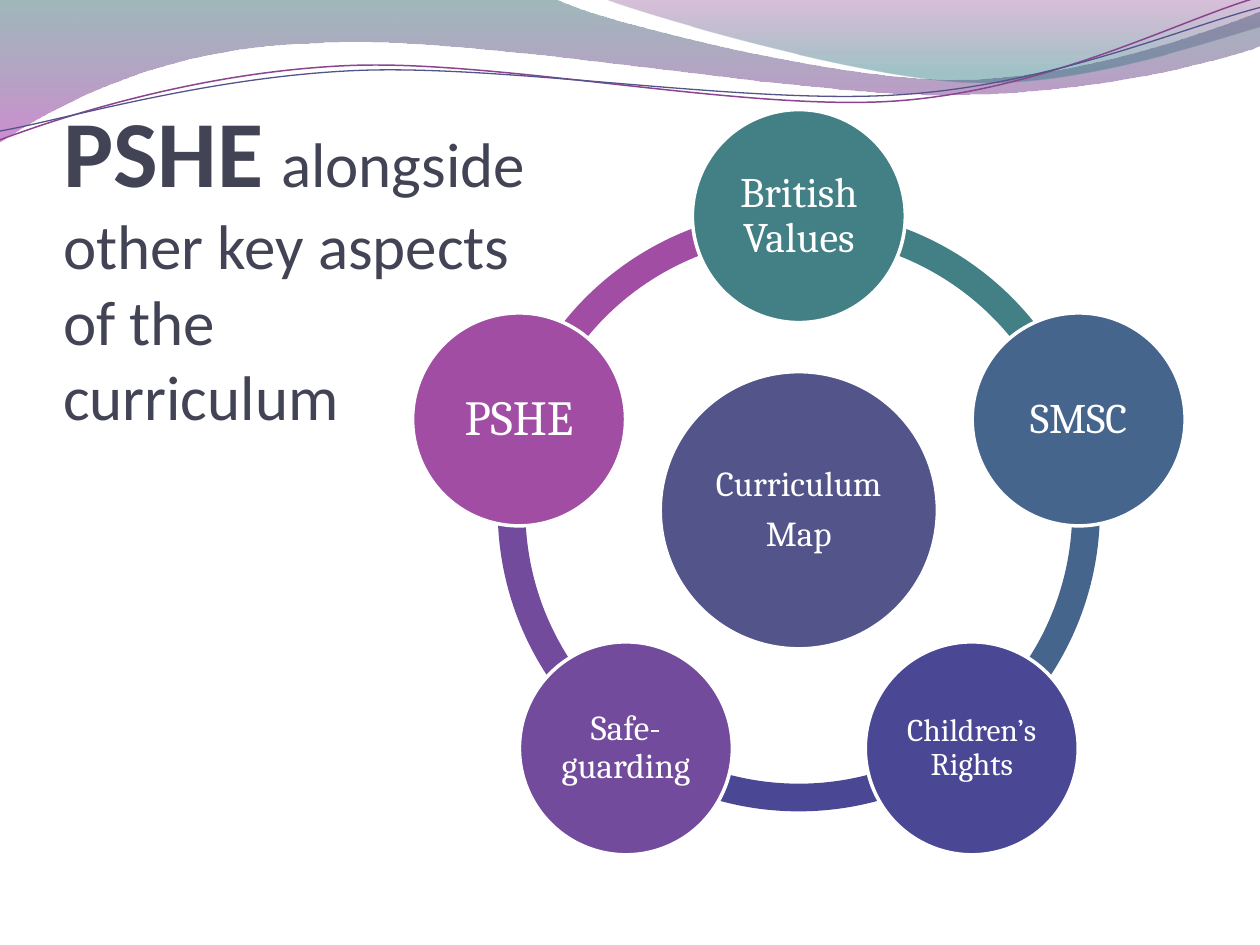
from dataclasses import dataclass
from math import cos, radians, sin

from lxml import etree
from pptx import Presentation
from pptx.dml.color import RGBColor
from pptx.enum.shapes import MSO_SHAPE
from pptx.enum.text import MSO_ANCHOR, MSO_AUTO_SIZE, PP_ALIGN
from pptx.oxml.ns import qn
from pptx.util import Inches, Pt

OVAL, BLOCK_ARC = MSO_SHAPE.OVAL, MSO_SHAPE.BLOCK_ARC
LEFT, CENTER = PP_ALIGN.LEFT, PP_ALIGN.CENTER
MIDDLE, BOTTOM = MSO_ANCHOR.MIDDLE, MSO_ANCHOR.BOTTOM
TITLE_ONLY_LAYOUT = 5


@dataclass(frozen=True)
class Theme:
    title_font: str = "Calibri"
    diagram_font: str = "Cambria"
    white: str = "FFFFFF"
    title: str = "424456"
    indigo: str = "53548A"
    teal: str = "438086"
    blue: str = "46658D"
    navy: str = "4A4894"
    violet: str = "734B9C"
    magenta: str = "A04DA3"
    line_magenta: str = "8D4490"
    title_strong: int = 54
    title_gap: int = 44
    title_size: int = 36
    hub_size: int = 20


# Each wave is a start point followed by segments:
# one point is a straight line, three points are a cubic curve.
BACK_WAVE = [(0, 0), [(4.4, -0.01)],
             [(4.76, 0.17), (6.64, 0.63), (7.58, 0.63)],
             [(8.53, 0.63), (9.58, 0.26), (10, 0.09)], [(10.01, 0.36)],
             [(9.83, 0.44), (8.7, 0.76), (7.46, 0.75)],
             [(6.22, 0.75), (3.82, 0.28), (2.57, 0.34)],
             [(1.29, 0.36), (0.46, 0.83), (-0.01, 1.13)], [(0, 0)]]
FRONT_WAVE = [(4.79, -0.01),
              [(5.09, 0.11), (6.82, 0.62), (7.69, 0.65)],
              [(8.56, 0.69), (9.61, 0.32), (10, 0.21)], [(10, 0)], [(4.79, -0.01)]]
MAGENTA_LINE = [(0, 1.11),
                [(0.48, 0.93), (1.58, 0.57), (2.77, 0.52)],
                [(3.95, 0.47), (5.93, 0.89), (7.13, 0.8)],
                [(8.33, 0.71), (9.38, 0.15), (9.98, -0.02)]]
INDIGO_LINE = [(0, 1.04),
               [(0.47, 0.96), (1.64, 0.61), (2.83, 0.56)],
               [(4.03, 0.51), (5.97, 0.84), (7.17, 0.75)],
               [(8.36, 0.67), (9.41, 0.21), (10, 0.06)]]
LINE_TILT = 2.7  # degrees, counterclockwise

# Stops are position, colour and opacity in percent.
BACK_STOPS = [(0, "2D6368", 45), (1, "A530A9", 55)]
FRONT_STOPS = [(0, "7F2F82", 30), (0.8, "2F7B82", 45)]

HUB_X, HUB_Y = 6.34, 4.05
HUB_DIAMETER, NODE_DIAMETER, RING_DIAMETER = 2.2, 1.69, 4.78
ORBIT_RADIUS = 2.335
RING_THICKNESS = 0.046
ANGLE_UNIT = 0.6  # adjustment value of one degree


def turn(point, pivot, degrees):
    """Turn a point clockwise about the pivot."""
    dx, dy = point[0] - pivot[0], point[1] - pivot[1]
    cosine, sine = cos(radians(degrees)), sin(radians(degrees))
    return pivot[0] + dx * cosine - dy * sine, pivot[1] + dx * sine + dy * cosine


def make_curves(shape, segments):
    """Join the three line steps of each cubic segment into one curve."""
    steps = iter(list(shape.element.iter(qn("a:lnTo"))))
    for segment in segments:
        first, *others = [next(steps) for _ in segment]
        if others:
            first.tag = qn("a:cubicBezTo")
            for step in others:
                first.append(step[0])
                step.getparent().remove(step)


class SlideBuilder:
    def __init__(self, slide, theme):
        self.slide = slide
        self.theme = theme

    def outline(self, path, close, tilt=0, pivot=(0, 0)):
        start, *segments = path
        points = [turn(point, pivot, tilt) for point in [start, *sum(segments, [])]]
        first, *rest = [(Inches(x), Inches(y)) for x, y in points]
        builder = self.slide.shapes.build_freeform(*first)
        builder.add_line_segments(rest, close=close)
        shape = builder.convert_to_shape()
        make_curves(shape, segments)
        shape.rotation = -tilt % 360
        shape.shadow.inherit = False
        return shape

    def wave(self, path, stops):
        shape = self.outline(path, close=True)
        shape.line.fill.background()
        shape.fill.gradient()
        shape.fill.gradient_angle = 270
        for gradient_stop, (position, color, _) in zip(shape.fill.gradient_stops, stops):
            gradient_stop.position = position
            gradient_stop.color.rgb = RGBColor.from_string(color)
        for color_element, (_, _, opacity) in zip(shape.element.iter(qn("a:srgbClr")), stops):
            etree.SubElement(color_element, qn("a:alpha"), val=str(opacity * 1000))

    def wave_line(self, path, pivot, color, width):
        shape = self.outline(path, False, LINE_TILT, pivot)
        shape.fill.background()
        shape.line.color.rgb = RGBColor.from_string(color)
        shape.line.width = Pt(width)

    def centered_shape(self, kind, x, y, diameter, color):
        shape = self.slide.shapes.add_shape(
            kind, Inches(x - diameter / 2), Inches(y - diameter / 2),
            Inches(diameter), Inches(diameter))
        shape.shadow.inherit = False
        shape.fill.solid()
        shape.fill.fore_color.rgb = RGBColor.from_string(color)
        return shape

    def ring_arc(self, start, end, color):
        arc = self.centered_shape(BLOCK_ARC, HUB_X, HUB_Y, RING_DIAMETER, color)
        arc.line.fill.background()
        arc.adjustments[0] = start * ANGLE_UNIT
        arc.adjustments[1] = end * ANGLE_UNIT
        arc.adjustments[2] = RING_THICKNESS

    def circle(self, x, y, diameter, color, text, size):
        circle = self.centered_shape(OVAL, x, y, diameter, color)
        circle.line.color.rgb = RGBColor.from_string(self.theme.white)
        circle.line.width = Pt(2)
        frame = circle.text_frame
        frame.text = text
        frame.word_wrap = True
        frame.vertical_anchor = MIDDLE
        frame.margin_left = frame.margin_right = Inches(0.03)
        frame.margin_top = frame.margin_bottom = Inches(0.03)
        for paragraph in frame.paragraphs:
            paragraph.alignment = CENTER
            paragraph.line_spacing = 0.9
            paragraph.space_after = Pt(size * 0.35)
            for run in paragraph.runs:
                self.format_run(run, self.theme.diagram_font, size, self.theme.white)

    def format_run(self, run, font_name, size, color):
        run.font.name = font_name
        run.font.size = Pt(size)
        run.font.color.rgb = RGBColor.from_string(color)

    def title(self, strong, first_line, other_lines):
        theme = self.theme
        title = self.slide.shapes.title
        title.left, title.top = Inches(0.5), Inches(1.39)
        title.width, title.height = Inches(9), Inches(2.05)
        frame = title.text_frame
        frame.text = "\n".join(["", *other_lines])
        for text in (strong, " ", first_line):
            frame.paragraphs[0].add_run().text = text
        frame.auto_size = MSO_AUTO_SIZE.NONE
        frame.word_wrap = True
        frame.vertical_anchor = BOTTOM
        frame.margin_left = frame.margin_right = frame.margin_bottom = 0
        frame.margin_top = Inches(0.05)
        for paragraph in frame.paragraphs:
            paragraph.alignment = LEFT
            for run in paragraph.runs:
                self.format_run(run, theme.title_font, theme.title_size, theme.title)
        strong_run, gap_run, _ = frame.paragraphs[0].runs
        strong_run.font.size, strong_run.font.bold = Pt(theme.title_strong), True
        gap_run.font.size = Pt(theme.title_gap)
        title.element.getparent().append(title.element)  # bring to front


def main():
    presentation = Presentation()
    presentation.slide_width, presentation.slide_height = Inches(10), Inches(7.5)
    slide = presentation.slides.add_slide(presentation.slide_layouts[TITLE_ONLY_LAYOUT])
    theme = Theme()
    builder = SlideBuilder(slide, theme)

    builder.wave(BACK_WAVE, BACK_STOPS)
    builder.wave(FRONT_WAVE, FRONT_STOPS)
    builder.wave_line(MAGENTA_LINE, (4.99, 0.57), theme.line_magenta, 0.85)
    builder.wave_line(INDIGO_LINE, (5, 0.59), theme.indigo, 0.75)

    nodes = [("British Values", theme.teal, 24), ("SMSC", theme.blue, 24),
             ("Children’s Rights", theme.navy, 18), ("Safe-guarding", theme.violet, 20),
             ("PSHE", theme.magenta, 28)]
    step = 360 // len(nodes)
    angles = [(270 + step * index) % 360 for index in range(len(nodes))]
    for angle, (_, color, _) in reversed(list(zip(angles, nodes))):
        # The arc before the top circle takes the colour of the last circle.
        builder.ring_arc(angle, (angle + step) % 360, color)
    builder.circle(HUB_X, HUB_Y, HUB_DIAMETER, theme.indigo, "Curriculum\nMap", theme.hub_size)
    for angle, (text, color, size) in zip(angles, nodes):
        builder.circle(HUB_X + ORBIT_RADIUS * cos(radians(angle)),
                       HUB_Y + ORBIT_RADIUS * sin(radians(angle)),
                       NODE_DIAMETER, color, text, size)

    builder.title("PSHE", "alongside", ["other key aspects \vof the", "curriculum"])
    presentation.save("out.pptx")


if __name__ == "__main__":
    main()
